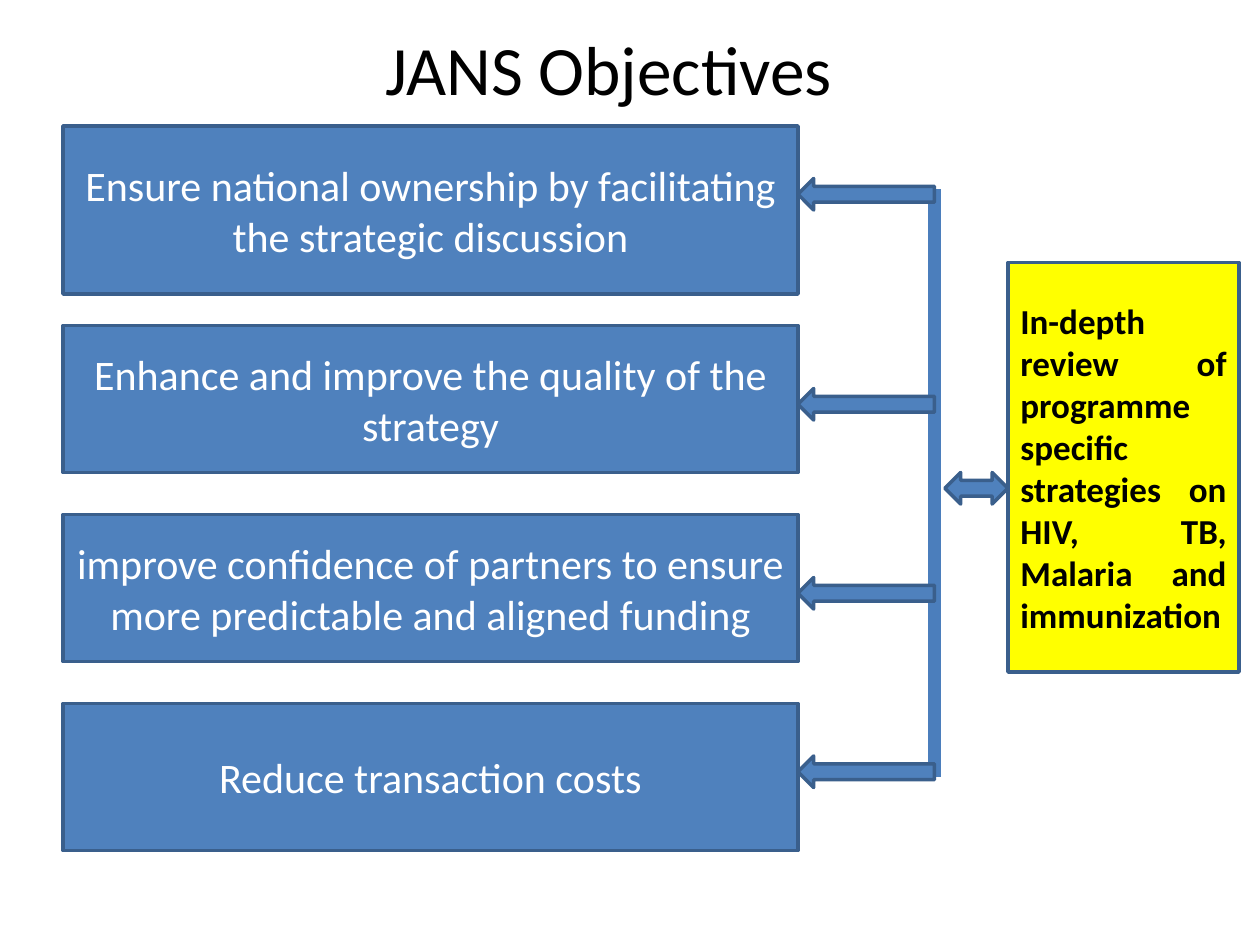
from dataclasses import dataclass

from lxml.etree import SubElement
from pptx import Presentation
from pptx.dml.color import RGBColor
from pptx.enum.shapes import MSO_CONNECTOR as Connector, MSO_SHAPE as Shape
from pptx.enum.text import MSO_ANCHOR as Anchor, PP_ALIGN as Align
from pptx.oxml.ns import qn
from pptx.slide import Slide
from pptx.util import Emu, Pt

BLUE = RGBColor(0x4F, 0x81, 0xBD)
EDGE = RGBColor(0x3A, 0x5F, 0x8C)
SPINE = RGBColor(0x4B, 0x7E, 0xBC)
YELLOW = RGBColor(0xFF, 0xFF, 0x00)
BLACK = RGBColor(0, 0, 0)
WHITE = RGBColor(0xFF, 0xFF, 0xFF)


def px(*lengths):
    """Turn lengths at 120 px to the inch into EMU."""
    return [Emu(length * 7620) for length in lengths]


@dataclass
class Board:
    """Draws the elements of one slide in a shared style."""
    slide: Slide
    font: str = "Calibri"
    edge_width: float = 2

    def label(self, frame, wording, size, color, align=Align.CENTER, bold=False):
        frame.word_wrap = True
        frame.vertical_anchor = Anchor.MIDDLE
        paragraph = frame.paragraphs[0]
        paragraph.text = wording
        paragraph.alignment = align
        font = paragraph.font
        font.name, font.size, font.bold = self.font, Pt(size), bold
        font.color.rgb = color

    def title(self, wording, *box):
        heading = self.slide.shapes.add_textbox(*px(*box))
        self.label(heading.text_frame, wording, 39.6, BLACK)

    def block(self, kind, *box, fill=BLUE):
        block = self.slide.shapes.add_shape(kind, *px(*box))
        block.shadow.inherit = False
        block.fill.solid()
        block.fill.fore_color.rgb = fill
        block.line.color.rgb = EDGE
        block.line.width = Pt(self.edge_width)
        return block

    def objective(self, wording, *box):
        self.label(self.block(Shape.RECTANGLE, *box).text_frame, wording, 24, WHITE)

    def review(self, wording, *box):
        panel = self.block(Shape.RECTANGLE, *box, fill=YELLOW)
        self.label(panel.text_frame, wording, 20, BLACK, Align.JUSTIFY, True)

    def spine(self, *ends):
        spine = self.slide.shapes.add_connector(Connector.STRAIGHT, *px(*ends))
        spine.line.color.rgb = SPINE
        spine.line.width = Pt(7)
        SubElement(spine._element.spPr, qn("a:effectLst"))


OBJECTIVES = [
    ("Ensure national ownership by facilitating the strategic discussion", 120, 160, 170),
    ("Enhance and improve the quality of the strategy", 310, 140, 370),
    ("improve confidence of partners to ensure more predictable and aligned funding",
     490, 140, 550),
    ("Reduce transaction costs", 670, 140, 720),
]


def main():
    deck = Presentation()
    deck.slide_width, deck.slide_height = px(1200, 900)
    board = Board(deck.slides.add_slide(deck.slide_layouts[6]))

    board.title("JANS Objectives", 30, 30, 1100, 70)
    for wording, top, height, _ in OBJECTIVES:
        board.objective(wording, 60, top, 700, height)
    board.review("In-depth review of programme specific strategies on HIV, TB, "
                 "Malaria and immunization", 960, 250, 220, 390)
    board.spine(890, 180, 890, 740)
    for *_, arrow_top in OBJECTIVES:
        board.block(Shape.LEFT_ARROW, 760, arrow_top, 130, 30)
    board.block(Shape.LEFT_RIGHT_ARROW, 900, 450, 60, 30)

    deck.save("out.pptx")


if __name__ == "__main__":
    main()
